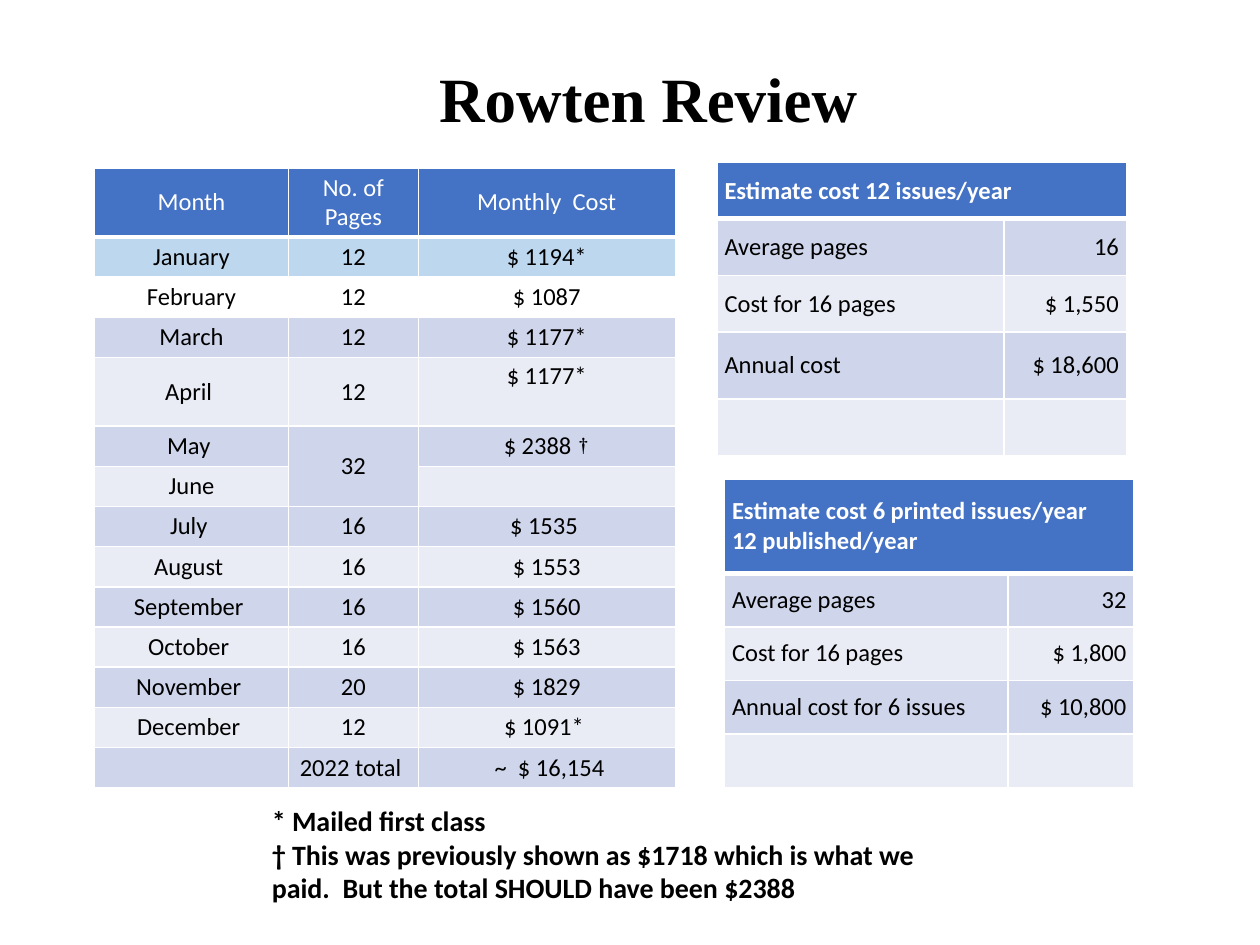
"""Build the newsletter cost review slide: monthly costs beside two yearly estimates."""
from lxml import etree
from pptx import Presentation
from pptx import util as u
from pptx.dml.color import RGBColor
from pptx.enum import text as t
from pptx.oxml.ns import qn

COLORS = {"header": "4472C4", "odd": "CFD5EA", "even": "E9EBF5", "january": "BDD7EE",
          "white": "FFFFFF", "black": "000000"}
LEFT, CENTER, RIGHT = t.PP_ALIGN.LEFT, t.PP_ALIGN.CENTER, t.PP_ALIGN.RIGHT

presentation = Presentation()
presentation.slide_width, presentation.slide_height = u.Inches(10), u.Inches(7.5)
column = presentation.slide_width / 100
row = presentation.slide_height / 75
slide = presentation.slides.add_slide(presentation.slide_layouts[6])


def write(paragraph, text, size=14, font="Calibri", color="black", bold=False, align=LEFT):
    paragraph.alignment = align
    if not text:
        etree.SubElement(paragraph._p, qn("a:endParaRPr"), sz=str(size * 100))
        return
    run = paragraph.add_run()
    run.text = text
    run.font.size, run.font.name, run.font.bold = u.Pt(size), font, bold
    run.font.color.rgb = RGBColor.from_string(COLORS[color])


def add_cost_table(left, top, widths, heights, records, aligns, bold_header, fills):
    frame = slide.shapes.add_table(len(heights), len(widths), int(left * column), int(top * row),
                                   int(sum(widths) * column), int(sum(heights) * row))
    table = frame.table
    for index, width in enumerate(widths):
        table.columns[index].width = int(width * column)
    for r, record in enumerate(records):
        table.rows[r].height = int(heights[r] * row)
        fill = fills.get(r, "odd" if r % 2 else "even")
        for c, value in enumerate(record):
            cell = table.cell(r, c)
            cell.vertical_anchor = t.MSO_ANCHOR.MIDDLE
            cell.margin_left = cell.margin_right = u.Inches(0.06)
            cell.margin_top = cell.margin_bottom = u.Inches(0.03)
            for side in "LRTB":
                thick = (r, side) in ((0, "B"), (1, "T"))
                line = etree.SubElement(cell._tc.get_or_add_tcPr(), qn("a:ln" + side),
                                        w=str(u.Pt(3 if thick else 1)))
                solid = etree.SubElement(line, qn("a:solidFill"))
                etree.SubElement(solid, qn("a:srgbClr"), val=COLORS["white"])
            if fill:
                cell.fill.solid()
                cell.fill.fore_color.rgb = RGBColor.from_string(COLORS[fill])
            else:
                cell.fill.background()
            for index, text in enumerate(value.split("\n")):
                paragraphs = cell.text_frame
                paragraph = paragraphs.add_paragraph() if index else paragraphs.paragraphs[0]
                write(paragraph, text, color="black" if r else "white",
                      bold=bold_header and r == 0, align=aligns[c] if r else aligns[0])
    return table


monthly_costs = [
    ("Month", "No. of Pages", "Monthly  Cost"),
    ("January", "12", "$ 1194*"),
    ("February", "12", "$ 1087"),
    ("March", "12", "$ 1177*"),
    ("April ", "12", "$ 1177*"),
    ("May ", "32", "$ 2388 "),
    ("June", "", ""),
    ("July ", "16", "$ 1535 "),
    ("August ", "16", "$ 1553"),
    ("September ", "16", "$ 1560"),
    ("October ", "16", "$ 1563"),
    ("November ", "20", "$ 1829"),
    ("December ", "12", "$ 1091* "),
    ("", "2022 total ", " ~  $ 16,154"),
]
month_heights = [5.45 if r in (0, 4) else 3.19 for r in range(len(monthly_costs))]
monthly = add_cost_table(7.5, 13.35, [15.4, 10.3, 20.4], month_heights, monthly_costs,
                         [CENTER] * 3, False, {0: "header", 1: "january", 2: None})
monthly.cell(5, 1).merge(monthly.cell(6, 1))
monthly.cell(4, 2).vertical_anchor = t.MSO_ANCHOR.TOP
write(monthly.cell(5, 2).text_frame.paragraphs[0], "†", font="Cambria", align=CENTER)

estimates = [
    (56.9, 12.9, [22.8, 9.7], [4.45, 4.5, 4.5, 5.3, 4.5],
     [("Estimate cost 12 issues/year", ""), ("Average pages", "16"),
      ("Cost for 16 pages", "$ 1,550"), ("Annual cost", "$ 18,600"), ("", "")]),
    (57.5, 38, [22.5, 10], [7.5, 4.25, 4.25, 4.25, 4.25],
     [("Estimate cost 6 printed issues/year\n12 published/year", ""), ("Average pages", "32"),
      ("Cost for 16 pages", "$ 1,800"), ("Annual cost for 6 issues", "$ 10,800"), ("", "")]),
]
for left, top, widths, heights, records in estimates:
    estimate = add_cost_table(left, top, widths, heights, records, [LEFT, RIGHT], True,
                              {0: "header"})
    estimate.cell(0, 0).merge(estimate.cell(0, 1))

captions = [
    (32.5, 4.2, 37.9, 7.1, ["Rowten Review"],
     dict(size=36, font="Times New Roman", align=CENTER)),
    (20.6, 63.3, 55.6, 9.1,
     ["* Mailed first class",
      "† This was previously shown as $1718 which is what we paid.  "
      "But the total SHOULD have been $2388"], dict(size=16)),
]
for left, top, width, height, lines, style in captions:
    box = slide.shapes.add_textbox(int(left * column), int(top * row),
                                   int(width * column), int(height * row))
    box.text_frame.word_wrap = True
    for index, line in enumerate(lines):
        frame = box.text_frame
        paragraph = frame.add_paragraph() if index else frame.paragraphs[0]
        write(paragraph, line, bold=True, **style)

presentation.save("out.pptx")
